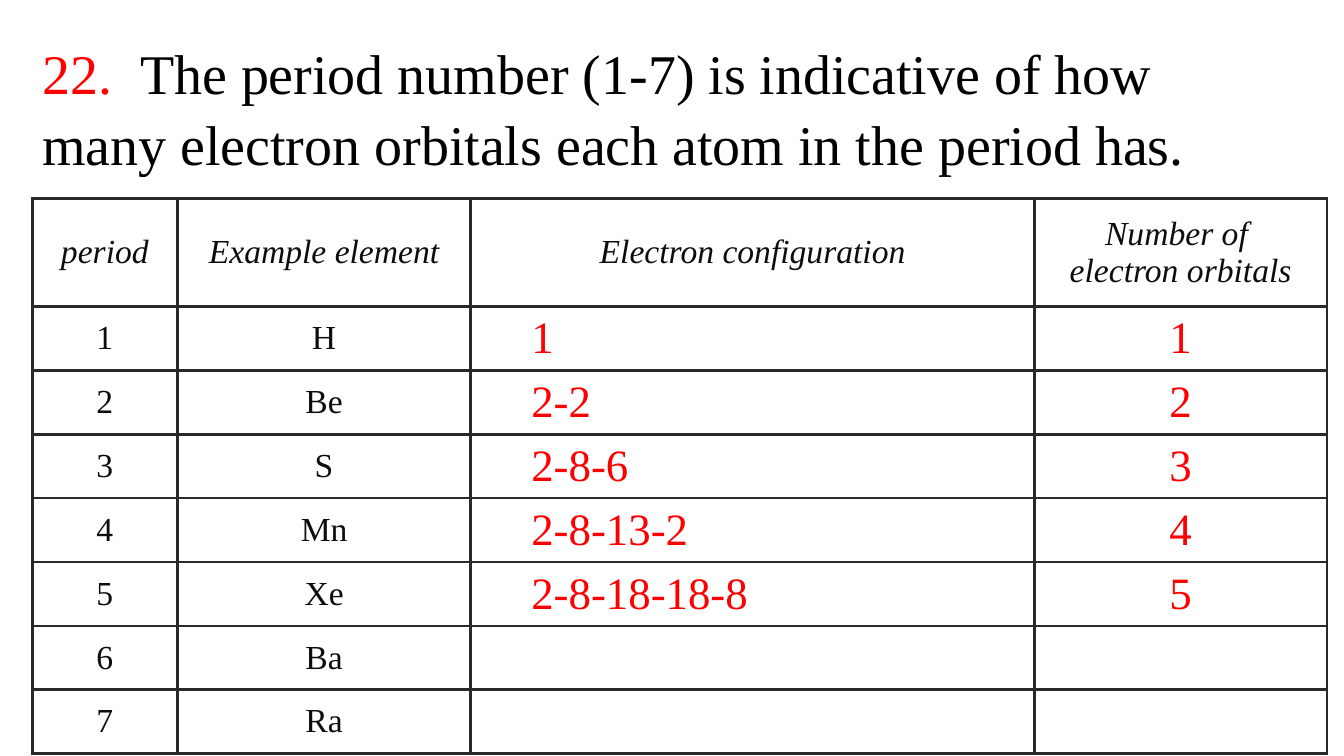
from lxml import etree
from pptx import Presentation
from pptx.dml.color import RGBColor
from pptx.enum.text import MSO_ANCHOR, PP_ALIGN
from pptx.oxml.ns import qn
from pptx.util import Inches, Pt

RED = RGBColor(0xFF, 0x00, 0x00)
BLACK = RGBColor(0x00, 0x00, 0x00)
INK = RGBColor(0x0D, 0x0D, 0x0D)
RULE = RGBColor(0x29, 0x29, 0x29)
CENTER, LEFT = PP_ALIGN.CENTER, PP_ALIGN.LEFT
MIDDLE = MSO_ANCHOR.MIDDLE
BLANK_LAYOUT = 6

LABEL = {"size": Pt(24), "color": INK}
HEADING = {**LABEL, "italic": True}
ANSWER = {"size": Pt(32), "color": RED}
NUMBER = {"size": Pt(40), "color": RED}
STATEMENT = {"size": Pt(40), "color": BLACK}

HEADINGS = ("period", "Example element", "Electron configuration",
            "Number of \velectron orbitals")
ELEMENTS = ("H", "Be", "S", "Mn", "Xe", "Ba", "Ra")
CONFIGURATIONS = ("1", "2-2", "2-8-6", "2-8-13-2", "2-8-18-18-8", "", "")
COLUMN_WIDTHS = (10.8, 21.83, 41.94, 21.76)
HEADING_HEIGHT, BODY_HEIGHT = 14.27, 8.44


class SlideBuilder:
    """Places elements on a grid of 100 columns by 100 rows."""

    font_name = "Times New Roman"
    border_width = Pt(2.25)

    def __init__(self, deck):
        self.slide = deck.slides.add_slide(deck.slide_layouts[BLANK_LAYOUT])
        self.column = deck.slide_width / 100
        self.row = deck.slide_height / 100

    def across(self, columns):
        return round(columns * self.column)

    def down(self, rows):
        return round(rows * self.row)

    def format_span(self, span, style):
        for name, value in {"name": self.font_name, **style}.items():
            if name == "color":
                span.font.color.rgb = value
            else:
                setattr(span.font, name, value)

    def text(self, left, top, width, height, spans):
        box = self.slide.shapes.add_textbox(
            self.across(left), self.down(top),
            self.across(width), self.down(height))
        frame = box.text_frame
        frame.word_wrap = True
        para = frame.paragraphs[0]
        para.line_spacing = 1.05
        for words, style in spans:
            span = para.add_run()
            span.text = words
            self.format_span(span, style)

    def border(self, cell):
        properties = cell._tc.get_or_add_tcPr()
        for position, side in enumerate(("lnL", "lnR", "lnT", "lnB")):
            line = etree.Element(qn(f"a:{side}"), w=str(self.border_width))
            fill = etree.SubElement(line, qn("a:solidFill"))
            etree.SubElement(fill, qn("a:srgbClr"), val=str(RULE))
            properties.insert(position, line)

    def fill_cell(self, cell, words, style, alignment):
        cell.fill.background()
        self.border(cell)
        cell.vertical_anchor = MIDDLE
        if alignment == LEFT:
            cell.margin_left = Inches(0.6)
        para = cell.text_frame.paragraphs[0]
        para.alignment = alignment
        if words:
            para.text = words
            for span in para.runs:
                self.format_span(span, style)

    def table(self, left, top, widths, heights, rows):
        """Each row is a list of (words, style, alignment) entries."""
        table = self.slide.shapes.add_table(
            len(heights), len(widths), self.across(left), self.down(top),
            self.across(sum(widths)), self.down(sum(heights))).table
        table.first_row = table.horz_banding = False
        for column, width in zip(table.columns, widths):
            column.width = self.across(width)
        for row, height, entries in zip(table.rows, heights, rows):
            row.height = self.down(height)
            for cell, entry in zip(row.cells, entries):
                self.fill_cell(cell, *entry)


def table_rows():
    yield [(words, HEADING, CENTER) for words in HEADINGS]
    pairs = zip(ELEMENTS, CONFIGURATIONS)
    for period, (element, configuration) in enumerate(pairs, start=1):
        orbitals = str(period) if configuration else ""
        yield [(str(period), LABEL, CENTER), (element, LABEL, CENTER),
               (configuration, ANSWER, LEFT), (orbitals, ANSWER, CENTER)]


def main():
    deck = Presentation()
    deck.slide_width, deck.slide_height = Inches(13.33), Inches(7.5)
    builder = SlideBuilder(deck)
    builder.text(2.4, 4, 91.67, 27.33, [
        ("22.  ", NUMBER),
        ("The period number (1-7) is indicative of how many electron "
         "orbitals each atom in the period has.", STATEMENT)])
    heights = [HEADING_HEIGHT] + [BODY_HEIGHT] * len(ELEMENTS)
    builder.table(2.4, 26.27, COLUMN_WIDTHS, heights, table_rows())
    deck.save("out.pptx")


if __name__ == "__main__":
    main()
